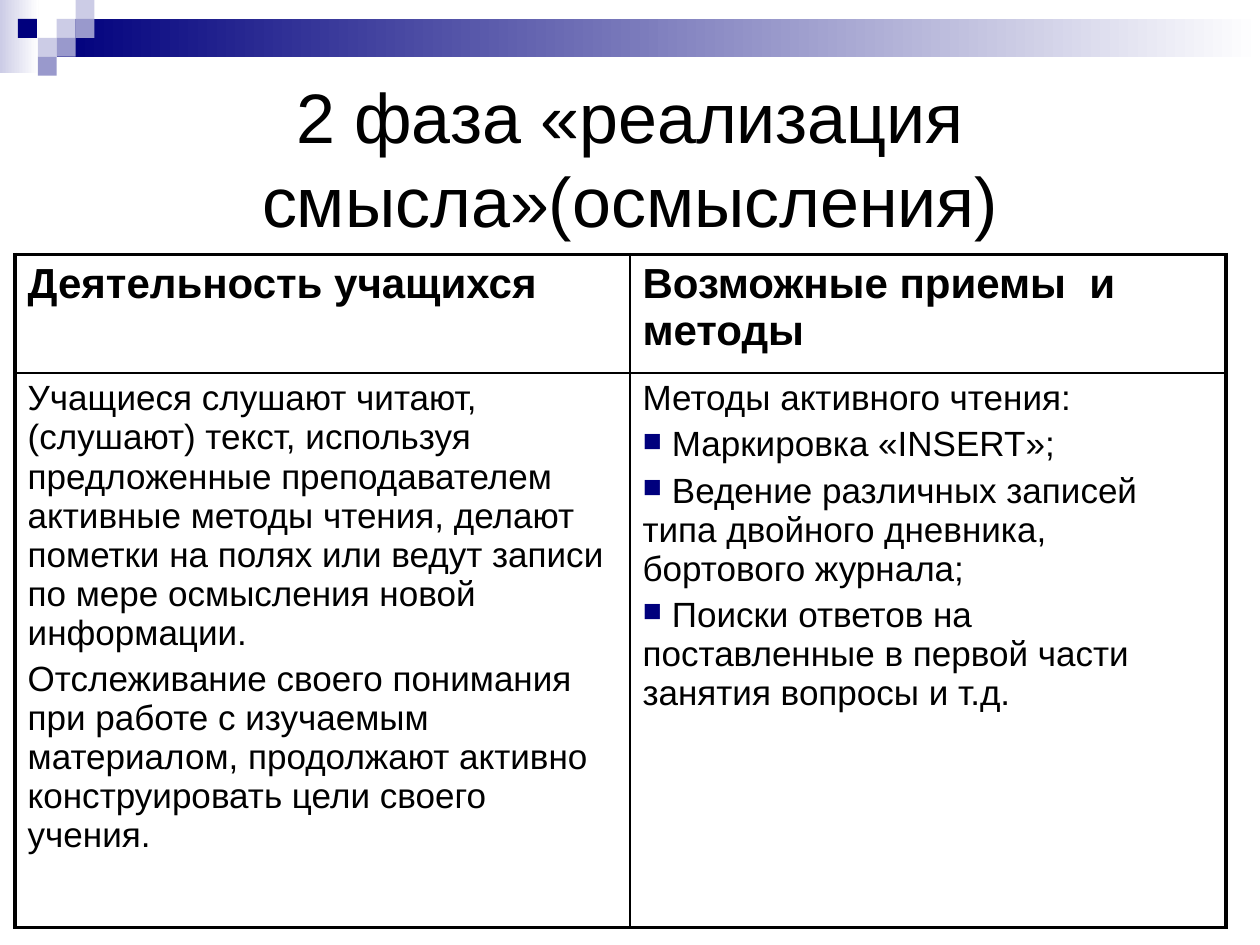
import pptx
import pptx.dml.color
import pptx.enum.shapes
import pptx.enum.text
import pptx.oxml
import pptx.oxml.ns
import pptx.util
from lxml import etree

RGBColor = pptx.dml.color.RGBColor
BLACK = RGBColor(0x00, 0x00, 0x00)
WHITE = RGBColor(0xFF, 0xFF, 0xFF)
NAVY = RGBColor(0x00, 0x00, 0x7D)
LILAC = RGBColor(0xCC, 0xCC, 0xE6)
VIOLET = RGBColor(0x99, 0x99, 0xCC)

WIDTH, HEIGHT = 10, 7.5
UNIT = 0.15  # side of one mosaic square, in inches
THICK, THIN = 2.25, 1

# Mosaic squares: column, row, colour
MOSAIC = [
    (3, 1, LILAC), (4, 0, LILAC), (4, 1, VIOLET), (2, 2, LILAC),
    (0.95, 1, NAVY), (3, 2, VIOLET), (2, 3, VIOLET),
]

TITLE = "2 фаза «реализация смысла»(осмысления)"
HEADINGS = ["Деятельность учащихся", "Возможные приемы  и методы"]
ACTIVITIES = [
    "Учащиеся слушают читают, (слушают) текст, используя предложенные "
    "преподавателем активные методы чтения, делают пометки на полях или "
    "ведут записи по мере осмысления новой информации.",
    "Отслеживание своего понимания при работе с изучаемым материалом, "
    "продолжают активно конструировать цели своего учения.",
]
METHODS_INTRO = "Методы активного чтения:"
METHODS = [
    " Маркировка «INSERT»;",
    " Ведение различных записей типа двойного дневника, бортового журнала;",
    " Поиски ответов на поставленные в первой части занятия вопросы и т.д.",
]


def write_text(frame, text, size=20, bold=False, align="LEFT", before=0, bullet=None):
    """Write one paragraph, using the empty first one when there is one."""
    para = frame.paragraphs[-1]
    if para.runs:
        para = frame.add_paragraph()
    para.alignment = getattr(pptx.enum.text.PP_ALIGN, align)
    para.space_before = pptx.util.Pt(before * size)
    span = para.add_run()
    span.text = text
    span.font.name = "Arial"
    span.font.size = pptx.util.Pt(size)
    span.font.bold = bold
    span.font.color.rgb = BLACK
    if bullet:
        props = para._p.get_or_add_pPr()
        props.set("marL", "0")
        props.set("indent", "0")
        color = etree.SubElement(props, pptx.oxml.ns.qn("a:buClr"))
        etree.SubElement(color, pptx.oxml.ns.qn("a:srgbClr"), val=str(NAVY))
        etree.SubElement(props, pptx.oxml.ns.qn("a:buSzPct"), val="75000")
        etree.SubElement(props, pptx.oxml.ns.qn("a:buChar"), char=bullet)


class SlideBuilder:
    """Holds the slide; lengths are mosaic units or shares of the slide."""

    def __init__(self, deck):
        self.slide = deck.slides.add_slide(deck.slide_layouts[6])
        self.width, self.height = deck.slide_width, deck.slide_height

    def share(self, left, top, width, height):
        return (int(left * self.width), int(top * self.height),
                int(width * self.width), int(height * self.height))

    def block(self, column, row, columns, rows, color, fade=False):
        place = [pptx.util.Inches(UNIT * n) for n in (column, row, columns, rows)]
        shape = self.slide.shapes.add_shape(
            pptx.enum.shapes.MSO_SHAPE.RECTANGLE, *place)
        shape.shadow.inherit = False
        shape.line.fill.background()
        if fade:
            shape.fill.gradient()
            shape.fill.gradient_angle = 0
            for stop, tint in zip(shape.fill.gradient_stops, (color, WHITE)):
                stop.color.rgb = tint
        else:
            shape.fill.solid()
            shape.fill.fore_color.rgb = color

    def title(self, text, *place):
        box = self.slide.shapes.add_textbox(*self.share(*place))
        frame = box.text_frame
        frame.word_wrap = True
        frame.vertical_anchor = pptx.enum.text.MSO_ANCHOR.MIDDLE
        write_text(frame, text, size=40, align="CENTER")

    def table(self, place, column_shares, row_shares):
        left, top, width, height = self.share(*place)
        table = self.slide.shapes.add_table(
            len(row_shares), len(column_shares), left, top, width, height).table
        table.first_row = table.horz_banding = False
        for column, part in zip(table.columns, column_shares):
            column.width = int(width * part)
        for row, part in zip(table.rows, row_shares):
            row.height = int(height * part)
        last_row, last_column = len(row_shares) - 1, len(column_shares) - 1
        for r in range(last_row + 1):
            for c in range(last_column + 1):
                cell = table.cell(r, c)
                cell.fill.background()
                outer = {"L": c == 0, "R": c == last_column,
                         "T": r == 0, "B": r == last_row}
                self.borders(cell, outer)
        return table

    def borders(self, cell, outer):
        props = cell._tc.get_or_add_tcPr()
        for index, (side, is_outer) in enumerate(outer.items()):
            weight = pptx.util.Pt(THICK if is_outer else THIN)
            props.insert(index, pptx.oxml.parse_xml(
                f'<a:ln{side} {pptx.oxml.ns.nsdecls("a")} w="{int(weight)}">'
                f'<a:solidFill><a:srgbClr val="{BLACK}"/></a:solidFill>'
                f'</a:ln{side}>'))


def main():
    deck = pptx.Presentation()
    deck.slide_width = pptx.util.Inches(WIDTH)
    deck.slide_height = pptx.util.Inches(HEIGHT)
    page = SlideBuilder(deck)

    # Header band and mosaic
    page.block(0, 0, 2.05, 3.85, LILAC, fade=True)
    page.block(3, 1, WIDTH / UNIT - 3, 2, NAVY, fade=True)
    for column, row, color in MOSAIC:
        page.block(column, row, 1, 1, color)

    # Title
    page.title(TITLE, 0.05, 0.5 / HEIGHT, 0.9, 0.2)

    # Table of activities and methods
    place = (0.012, 2.02 / HEIGHT, 0.961, 5.34 / HEIGHT)
    table = page.table(place, (4.88 / 9.61, 4.73 / 9.61), (0.94 / 5.34, 4.4 / 5.34))
    for column, heading in enumerate(HEADINGS):
        write_text(table.cell(0, column).text_frame, heading,
                   size=24, bold=True, before=0.2)
    activities, methods = (table.cell(1, c).text_frame for c in range(2))
    for text in ACTIVITIES:
        write_text(activities, text, before=0.2)
    write_text(methods, METHODS_INTRO, before=0.2)
    for text in METHODS:
        write_text(methods, text, before=0.2, bullet="■")

    deck.save("out.pptx")


if __name__ == "__main__":
    main()
